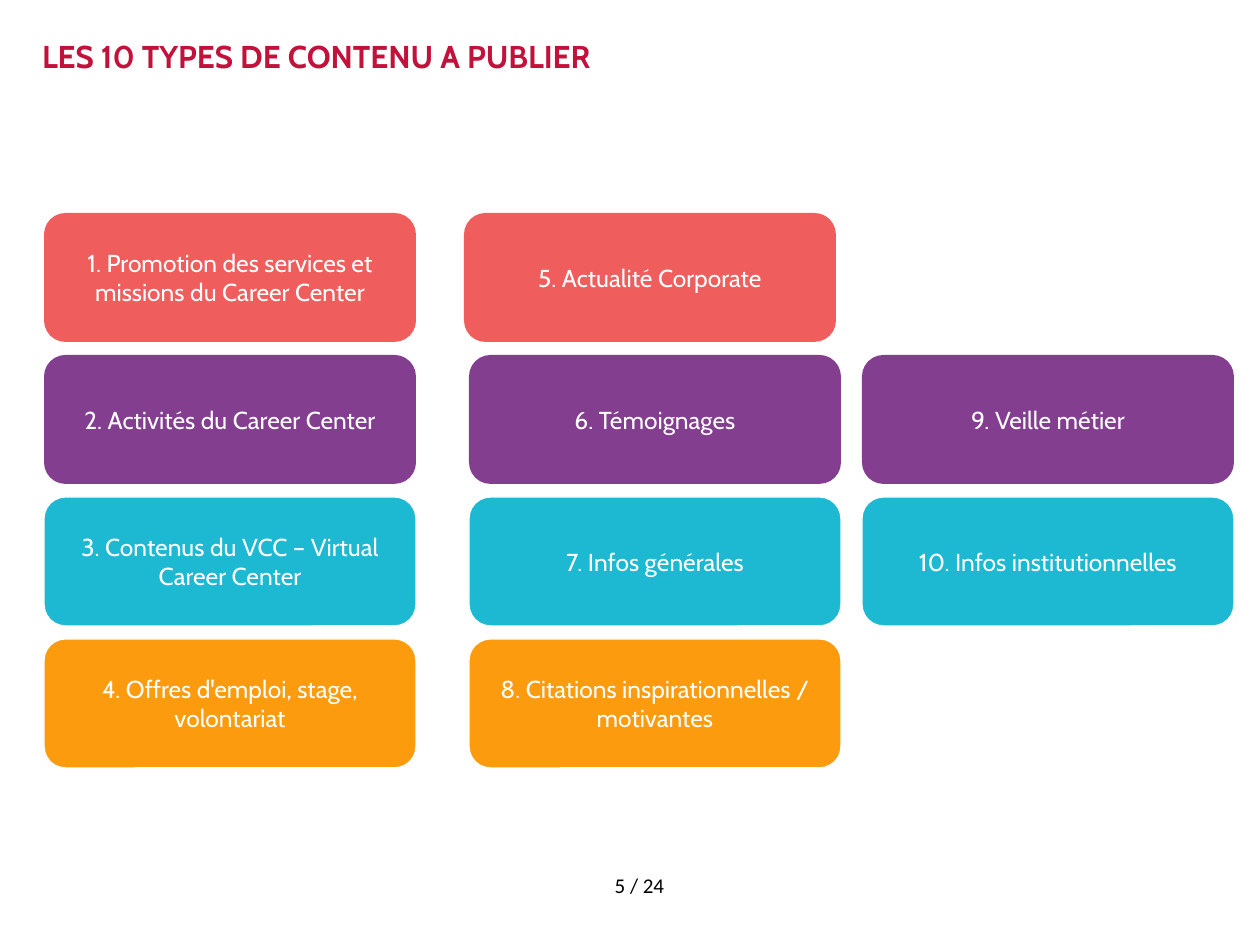
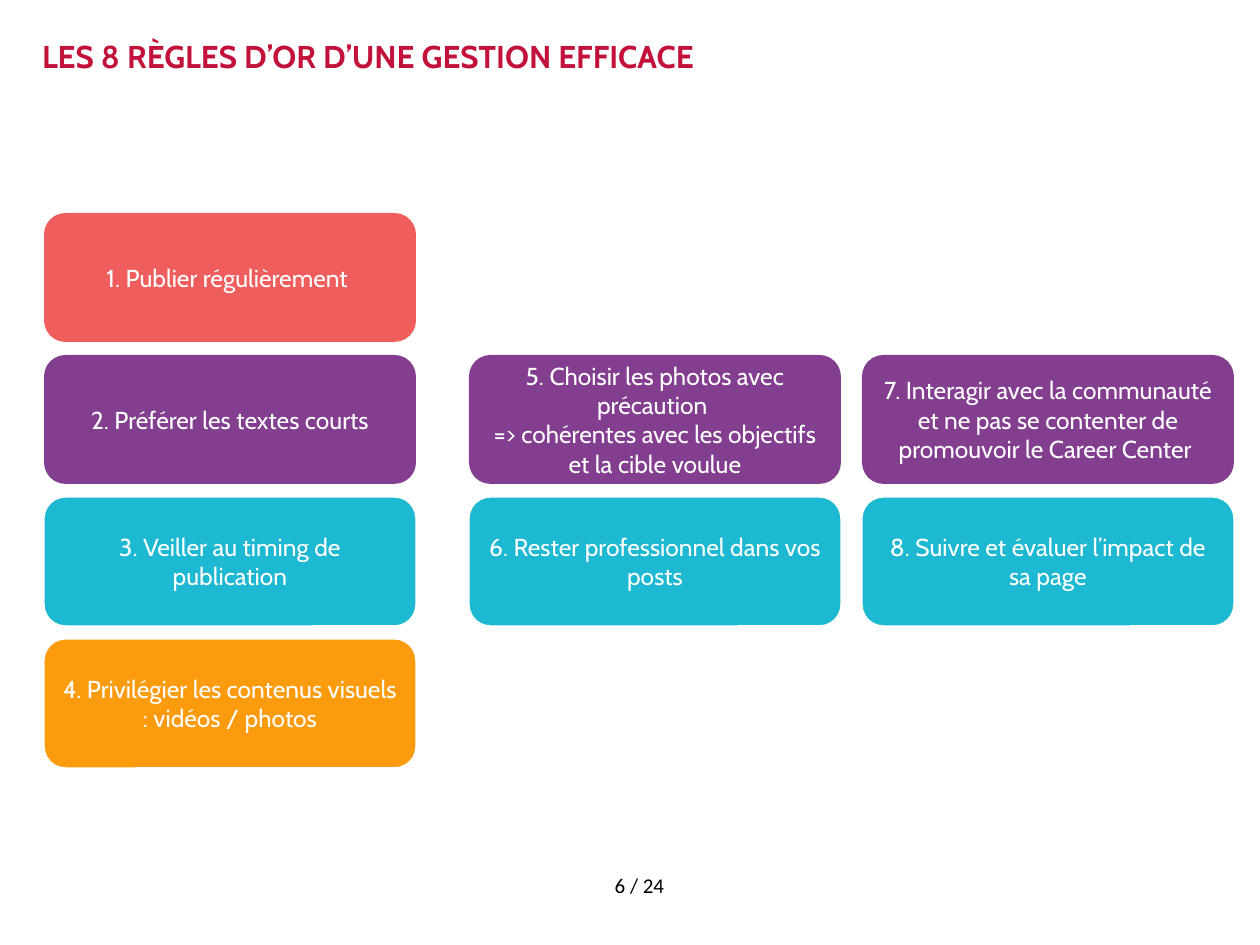
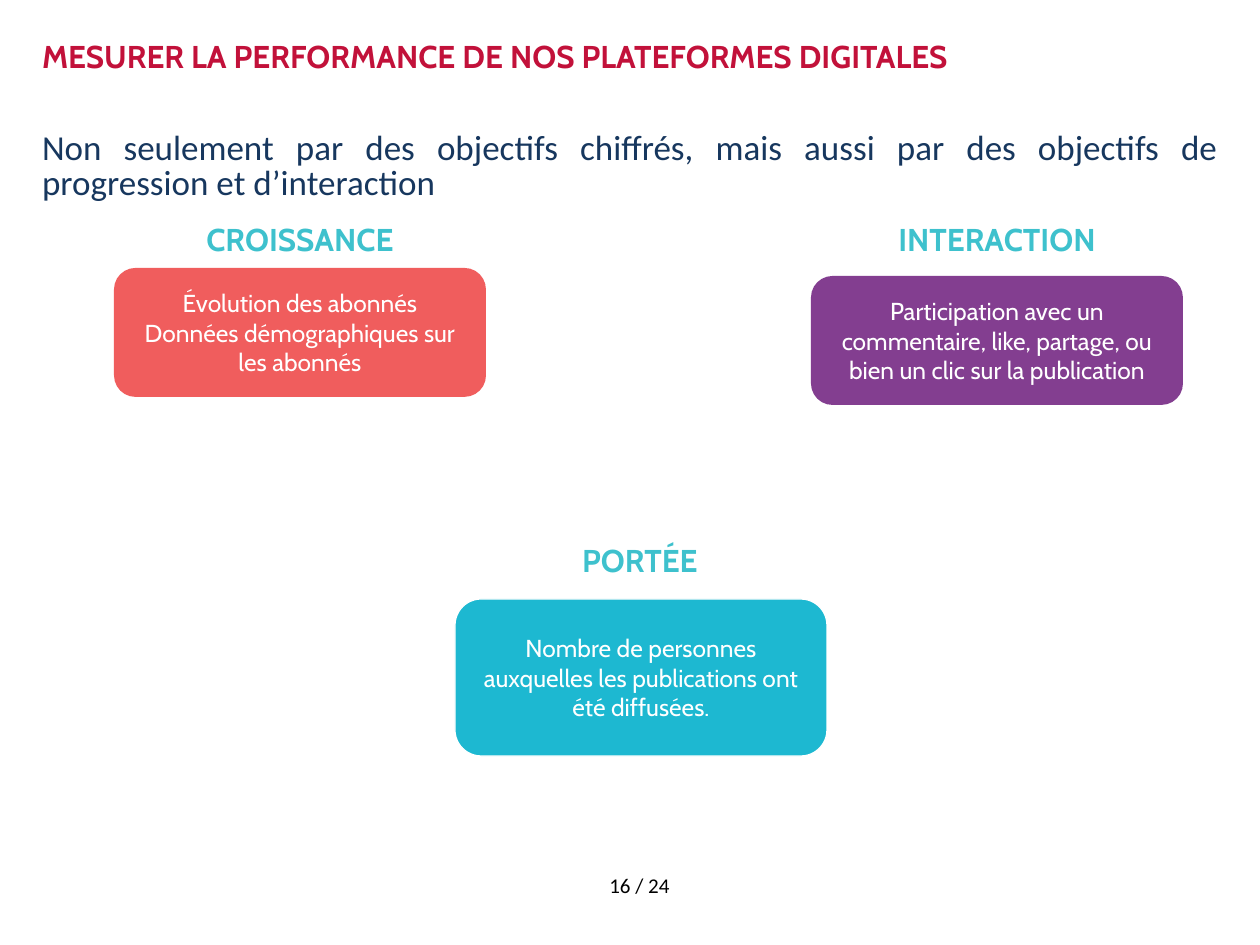
"""Builds three slides on content types, page rules and performance measures."""
from lxml import etree
from pptx import Presentation
from pptx import util as u
from pptx.dml.color import RGBColor
from pptx.enum import shapes, text
from pptx.oxml.ns import qn

PX = 914400 // 126
RED, PURPLE, CYAN, ORANGE = "F05D5D", "833E90", "1DB8D1", "FC9B0E"
ROW_COLOURS = [RED, PURPLE, CYAN, ORANGE]
OUTLINED = {CYAN, ORANGE}
TITLE_COLOUR, HEADING_COLOUR, INTRO_COLOUR = "C2113A", "3EC1CD", "17375E"
WHITE, BLACK = "FFFFFF", "000000"
ALIGN = text.PP_ALIGN

COLUMNS = [44, 469, 862]
FIRST_ROW, ROW_STEP = 213, 142
CARD_W, CARD_H = 372, 129
HEADING_W, HEADING_H = 280, 54
TITLE_BOX = (42, 37, 1176, 96)
INTRO_BOX = (42, 132, 1176, 71)
PAGE_BOX = (552, 866, 175, 39)
PAGE_COUNT = 24

GRID_SLIDES = [
    {"title": "LES 10 TYPES DE CONTENU A PUBLIER", "page": 5, "columns": [
        (0, ["1. Promotion des services et missions du Career Center",
             "2. Activités du Career Center",
             "3. Contenus du VCC – Virtual Career Center",
             "4. Offres d'emploi, stage, volontariat"]),
        (0, ["5. Actualité Corporate", "6. Témoignages", "7. Infos générales",
             "8. Citations inspirationnelles / motivantes"]),
        (1, ["9. Veille métier", "10. Infos institutionnelles"])],
     "shifts": {(1, 0): -5}},
    {"title": "LES 8 RÈGLES D’OR D’UNE GESTION EFFICACE", "page": 6, "columns": [
        (0, ["1. Publier régulièrement ", "2. Préférer les textes courts",
             "3. Veiller au timing de publication",
             "4. Privilégier les contenus visuels : vidéos / photos"]),
        (1, ["5. Choisir les photos avec précaution \n"
             "=> cohérentes avec les objectifs et la cible voulue",
             "6. Rester professionnel dans vos posts"]),
        (1, ["7. Interagir avec la communauté et ne pas se contenter de "
             "promouvoir le Career Center ",
             "8. Suivre et évaluer l’impact de sa page"])],
     "shifts": {}},
]

MEASURE_TITLE, MEASURE_PAGE = "MESURER LA PERFORMANCE DE NOS PLATEFORMES DIGITALES", 16
INTRO = ("Non seulement par des objectifs chiffrés, mais aussi par des objectifs de "
         "progression et d’interaction")
MEASURES = [
    ("CROISSANCE", (160, 214), (114, 268, CARD_W, CARD_H), RED,
     "Évolution des abonnés\nDonnées démographiques sur les abonnés"),
    ("INTERACTION", (857, 214), (811, 276, CARD_W, CARD_H), PURPLE,
     "Participation avec un commentaire, like, partage, ou bien un clic sur la publication"),
    ("PORTÉE", (500, 535), (455, 599, CARD_W, 157), CYAN,
     "Nombre de personnes auxquelles les publications ont été diffusées."),
]


def rgb(value):
    return RGBColor.from_string(value)


def emu(box):
    return [u.Emu(n * PX) for n in box]


def place(sp, box):
    sp.left, sp.top, sp.width, sp.height = emu(box)


def write(sp, content, size=14, font="Cabin", colour=WHITE, bold=False,
          align=ALIGN.CENTER, anchor=text.MSO_ANCHOR.TOP, inset=None, spacing=None):
    tf = sp.text_frame
    tf.word_wrap = True
    tf.auto_size = text.MSO_AUTO_SIZE.NONE
    tf.vertical_anchor = anchor
    if inset is not None:
        tf.margin_left = tf.margin_top = tf.margin_right = tf.margin_bottom = inset
    for i, line in enumerate(content.split("\n")):
        p = tf.add_paragraph() if i else tf.paragraphs[0]
        p.alignment = align
        p.space_before = u.Pt(0)
        if spacing:
            p.line_spacing = u.Pt(spacing)
        r = p.add_run()
        r.text = line
        r.font.size, r.font.name, r.font.bold = u.Pt(size), font, bold
        r.font.color.rgb = rgb(colour)


def add_text(s, content, box, **style):
    write(s.shapes.add_textbox(*emu(box)), content, **style)


def add_card(s, content, box, colour):
    sp = s.shapes.add_shape(shapes.MSO_SHAPE.ROUNDED_RECTANGLE, *emu(box))
    sp.shadow.inherit = False
    sp.fill.solid()
    sp.fill.fore_color.rgb = rgb(colour)
    if colour in OUTLINED:
        sp.line.color.rgb = rgb(WHITE)
        sp.line.width = u.Pt(0.75)
    else:
        sp.line.fill.background()
    write(sp, content, anchor=text.MSO_ANCHOR.MIDDLE)


def add_slide(prs, title, page, layout="Title Only"):
    s = prs.slides.add_slide(prs.slide_layouts.get_by_name(layout))
    place(s.shapes.title, TITLE_BOX)
    write(s.shapes.title, title, size=18, colour=TITLE_COLOUR, bold=True,
          align=ALIGN.LEFT, inset=0)
    add_text(s, f"{page} / {PAGE_COUNT}", PAGE_BOX, size=12, font="Calibri", colour=BLACK)
    return s


def add_grid_slide(prs, content):
    s = add_slide(prs, content["title"], content["page"])
    for col, (first, cards) in enumerate(content["columns"]):
        for row, card in enumerate(cards, first):
            left = COLUMNS[col] + content["shifts"].get((col, row), 0)
            top = FIRST_ROW + row * ROW_STEP
            add_card(s, card, (left, top, CARD_W, CARD_H), ROW_COLOURS[row])


def add_measure_slide(prs):
    s = add_slide(prs, MEASURE_TITLE, MEASURE_PAGE, "Title and Content")
    body = s.placeholders[1]
    place(body, INTRO_BOX)
    body.fill.solid()
    body.fill.fore_color.rgb = rgb(WHITE)
    pPr = body.text_frame.paragraphs[0]._p.get_or_add_pPr()
    pPr.set("marL", "0")
    pPr.set("indent", "0")
    etree.SubElement(pPr, qn("a:buNone"))
    write(body, INTRO, size=20, font="Calibri", colour=INTRO_COLOUR,
          align=ALIGN.JUSTIFY, inset=0, spacing=20)
    for heading, corner, box, colour, card in MEASURES:
        add_text(s, heading, (*corner, HEADING_W, HEADING_H), size=18,
                 colour=HEADING_COLOUR, bold=True)
        add_card(s, card, box, colour)


def main():
    prs = Presentation()
    prs.slide_width, prs.slide_height = u.Inches(10), u.Inches(7.5)
    for content in GRID_SLIDES:
        add_grid_slide(prs, content)
    add_measure_slide(prs)
    prs.save("out.pptx")


if __name__ == "__main__":
    main()
